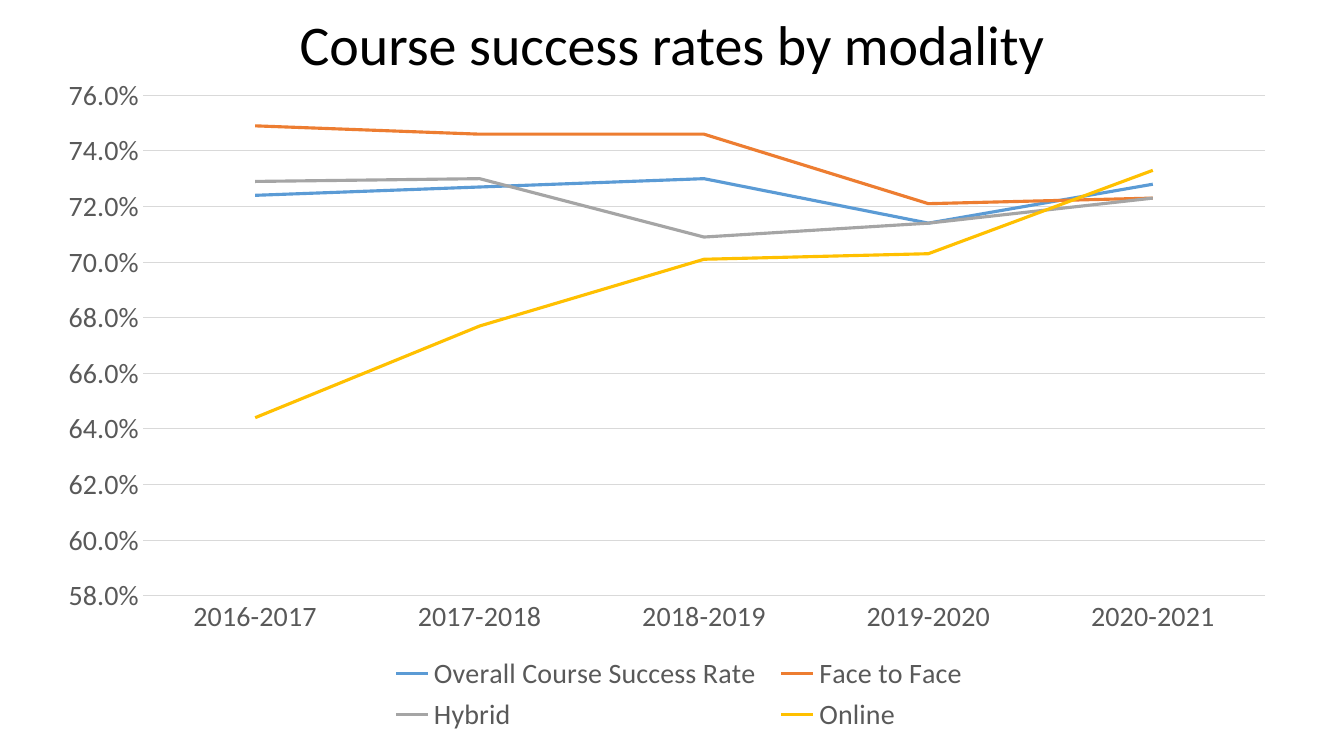
from pptx import Presentation
from pptx.chart.data import CategoryChartData as Data
from pptx.dml.color import RGBColor
from pptx.enum.chart import XL_CHART_TYPE as Kind, XL_LEGEND_POSITION as Spot
from pptx.enum.chart import XL_TICK_MARK as Tick
from pptx.enum.text import MSO_ANCHOR as Anchor, PP_ALIGN as Align
from pptx.oxml import parse_xml
from pptx.oxml.ns import nsdecls, qn
from pptx.util import Cm, Pt

BLACK = RGBColor(0x00, 0x00, 0x00)
TEXT = RGBColor(0x59, 0x59, 0x59)
GRID = RGBColor(0xD9, 0xD9, 0xD9)
BLUE = RGBColor(0x5B, 0x9B, 0xD5)
ORANGE = RGBColor(0xED, 0x7D, 0x31)
GRAY = RGBColor(0xA5, 0xA5, 0xA5)
GOLD = RGBColor(0xFF, 0xC0, 0x00)
FONT = "Calibri"

YEARS = ["2016-2017", "2017-2018", "2018-2019", "2019-2020", "2020-2021"]
RATES = [
    ("Overall Course Success Rate", BLUE, [0.724, 0.727, 0.73, 0.714, 0.728]),
    ("Face to Face", ORANGE, [0.749, 0.746, 0.746, 0.721, 0.723]),
    ("Hybrid", GRAY, [0.729, 0.73, 0.709, 0.714, 0.723]),
    ("Online", GOLD, [0.644, 0.677, 0.701, 0.703, 0.733]),
]


def place(node, index, inner, **box):
    old = node.find(qn("c:layout"))
    if old is not None:
        node.remove(old)
    target = '<c:layoutTarget val="inner"/>' if inner else ""
    modes = "".join(f'<c:{side}Mode val="edge"/>' for side in "xy")
    sizes = "".join(f'<c:{key} val="{val}"/>' for key, val in box.items())
    node.insert(index, parse_xml(
        f'<c:layout {nsdecls("c")}><c:manualLayout>{target}{modes}{sizes}'
        "</c:manualLayout></c:layout>"))


prs = Presentation()
prs.slide_width, prs.slide_height = Cm(33.87), Cm(19.05)
slide = prs.slides.add_slide(prs.slide_layouts[5])

data = Data(number_format="0.0%")
data.categories = YEARS
for name, color, vals in RATES:
    data.add_series(name, vals)
frame = slide.shapes.add_chart(
    Kind.LINE, Cm(1.09), Cm(1.55), Cm(31.42), Cm(17.04), data)
chart = frame.chart
chart.has_title = False
chart.font.name = FONT
chart.font.size = Pt(20)
chart.font.color.rgb = TEXT

plot = chart.plots[0]
plot.vary_by_categories = False
for line, (name, color, vals) in zip(plot.series, RATES):
    line.smooth = False
    line.format.line.color.rgb = color
    line.format.line.width = Pt(2.25)

years, rates = chart.category_axis, chart.value_axis
for axis in (years, rates):
    axis.major_tick_mark = axis.minor_tick_mark = Tick.NONE
rates.minimum_scale, rates.maximum_scale = 0.58, 0.76
rates.major_unit = 0.02
rates.tick_labels.number_format = "0.0%"
rates.tick_labels.number_format_is_linked = False
rates.format.line.fill.background()
rates.has_major_gridlines = True
for part in (years, rates.major_gridlines):
    part.format.line.color.rgb = GRID
    part.format.line.width = Pt(0.75)

chart.has_legend = True
legend = chart.legend
legend.position = Spot.BOTTOM
legend.include_in_layout = False
root = chart.element
place(root.find(".//" + qn("c:plotArea")), 0, True, x=0.08, y=0.05, w=0.9, h=0.74)
place(root.find(".//" + qn("c:legend")), 1, False, x=0.27, y=0.87, w=0.48, h=0.13)

title = slide.shapes.title
title.left, title.top = Cm(2.33), Cm(0.3)
title.width, title.height = Cm(29.21), Cm(3.68)
title.element.getparent().append(title.element)
text = title.text_frame
text.text = "Course success rates by modality"
text.word_wrap = True
text.vertical_anchor = Anchor.TOP
head = text.paragraphs[0]
head.alignment = Align.CENTER
head.line_spacing = 0.9
head.font.name = FONT
head.font.size = Pt(40)
head.font.color.rgb = BLACK

prs.save("out.pptx")
